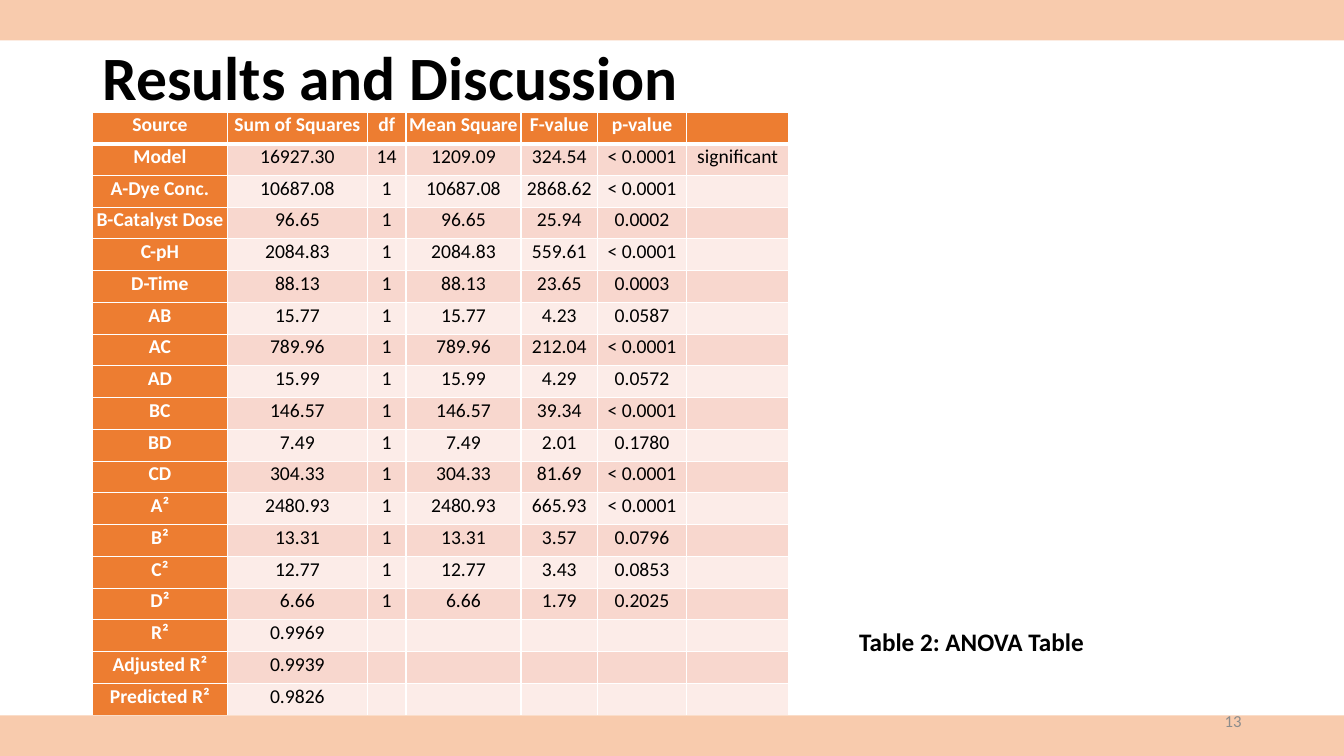
from lxml import etree
from pptx import Presentation
from pptx.dml.color import RGBColor
from pptx.enum.shapes import MSO_SHAPE
from pptx.enum.text import MSO_ANCHOR, MSO_AUTO_SIZE, PP_ALIGN
from pptx.oxml.ns import qn
from pptx.util import Cm, Pt

RECT = MSO_SHAPE.RECTANGLE
MIDDLE, TOP = MSO_ANCHOR.MIDDLE, MSO_ANCHOR.TOP
LEFT, CENTER, RIGHT = PP_ALIGN.LEFT, PP_ALIGN.CENTER, PP_ALIGN.RIGHT
NO_AUTOFIT = MSO_AUTO_SIZE.NONE

BLACK = RGBColor(0x00, 0x00, 0x00)
WHITE = RGBColor(0xFF, 0xFF, 0xFF)
GREY = RGBColor(0x8C, 0x8C, 0x8C)
ORANGE = RGBColor(0xED, 0x7D, 0x31)
PEACH = RGBColor(0xF8, 0xCB, 0xAD)
BAND_DARK = RGBColor(0xF8, 0xD7, 0xCE)
BAND_LIGHT = RGBColor(0xFC, 0xEC, 0xE8)

FONT = "Calibri"
SLIDE_W, SLIDE_H, BAR_H = 33.87, 19.05, 1.02
COL_WIDTHS = [3.4, 3.53, 0.97, 2.9, 1.93, 2.24, 2.58]

ANOVA = [
    ["Source", "Sum of Squares", "df", "Mean Square", "F-value", "p-value", ""],
    ["Model", "16927.30", "14", "1209.09", "324.54", "< 0.0001", "significant"],
    ["A-Dye Conc.", "10687.08", "1", "10687.08", "2868.62", "< 0.0001", ""],
    ["B-Catalyst Dose", "96.65", "1", "96.65", "25.94", "0.0002", ""],
    ["C-pH", "2084.83", "1", "2084.83", "559.61", "< 0.0001", ""],
    ["D-Time", "88.13", "1", "88.13", "23.65", "0.0003", ""],
    ["AB", "15.77", "1", "15.77", "4.23", "0.0587", ""],
    ["AC", "789.96", "1", "789.96", "212.04", "< 0.0001", ""],
    ["AD", "15.99", "1", "15.99", "4.29", "0.0572", ""],
    ["BC", "146.57", "1", "146.57", "39.34", "< 0.0001", ""],
    ["BD", "7.49", "1", "7.49", "2.01", "0.1780", ""],
    ["CD", "304.33", "1", "304.33", "81.69", "< 0.0001", ""],
    ["A²", "2480.93", "1", "2480.93", "665.93", "< 0.0001", ""],
    ["B²", "13.31", "1", "13.31", "3.57", "0.0796", ""],
    ["C²", "12.77", "1", "12.77", "3.43", "0.0853", ""],
    ["D²", "6.66", "1", "6.66", "1.79", "0.2025", ""],
    ["R²", "0.9969", "", "", "", "", ""],
    ["Adjusted R²", "0.9939", "", "", "", "", ""],
    ["Predicted R²", "0.9826", "", "", "", "", ""],
]


def write(tf, text, size=14, color=BLACK, bold=False, align=LEFT, spacing=None):
    p = tf.paragraphs[0]
    p.alignment = align
    p.line_spacing = spacing
    p.font.size = Pt(size)
    if text:
        r = p.add_run()
        r.text = text
        r.font.name, r.font.size, r.font.bold = FONT, Pt(size), bold
        r.font.color.rgb = color


def add_title(s, box, text):
    sp = s.shapes.title
    sp.left, sp.top, sp.width, sp.height = map(Cm, box)
    tf = sp.text_frame
    tf.auto_size, tf.vertical_anchor = NO_AUTOFIT, MIDDLE
    write(tf, text, size=44, bold=True, spacing=0.9)


def add_bar(s, box):
    sp = s.shapes.add_shape(RECT, *map(Cm, box))
    sp.shadow.inherit = False
    sp.fill.solid()
    sp.fill.fore_color.rgb = PEACH
    sp.line.fill.background()


def add_label(s, box, text, anchor=TOP, **fmt):
    tf = s.shapes.add_textbox(*map(Cm, box)).text_frame
    tf.word_wrap, tf.vertical_anchor = True, anchor
    write(tf, text, **fmt)


def set_borders(cell, **widths):
    tc_pr = cell._tc.get_or_add_tcPr()
    # Border lines must precede the cell fill
    for i, (side, width) in enumerate(widths.items()):
        ln = etree.Element(qn(f"a:ln{side}"), w=str(Pt(width)))
        fill = etree.SubElement(ln, qn("a:solidFill"))
        etree.SubElement(fill, qn("a:srgbClr"), val=str(WHITE))
        tc_pr.insert(i, ln)


def add_anova_table(s, box):
    table = s.shapes.add_table(len(ANOVA), len(COL_WIDTHS), *map(Cm, box)).table
    for col, width in zip(table.columns, COL_WIDTHS):
        col.width = Cm(width)
    for i, values in enumerate(ANOVA):
        table.rows[i].height = Cm(box[3] / len(ANOVA))
        band = BAND_DARK if i % 2 else BAND_LIGHT
        for j, text in enumerate(values):
            cell = table.cell(i, j)
            header = i == 0 or j == 0
            cell.margin_left = cell.margin_right = 0
            cell.margin_top = cell.margin_bottom = 0
            cell.vertical_anchor = MIDDLE
            cell.fill.solid()
            cell.fill.fore_color.rgb = ORANGE if header else band
            set_borders(cell, L=1, R=1, T=3 if i == 1 else 1, B=3 if i == 0 else 1)
            write(cell.text_frame, text, color=WHITE if header else BLACK,
                  bold=header, align=CENTER, spacing=Pt(13))


def build_results_slide(prs):
    s = prs.slides.add_slide(prs.slide_layouts[5])
    # Title and table
    add_title(s, (2.33, 0.86, 29.21, 2.34), "Results and Discussion")
    add_anova_table(s, (2.33, 2.82, sum(COL_WIDTHS), 15.21))
    # Bottom and top bars
    for top in (SLIDE_H - BAR_H, 0):
        add_bar(s, (0, top, SLIDE_W, BAR_H))
    # Slide number and table caption
    add_label(s, (23.92, 17.66, 7.62, 1.01), "13", anchor=MIDDLE,
              size=12, color=GREY, align=RIGHT)
    add_label(s, (21.4, 15.65, 6.45, 1.03), "Table 2: ANOVA Table",
              size=18, bold=True)


def main():
    prs = Presentation()
    prs.slide_width, prs.slide_height = Cm(SLIDE_W), Cm(SLIDE_H)
    build_results_slide(prs)
    prs.save("out.pptx")


if __name__ == "__main__":
    main()
